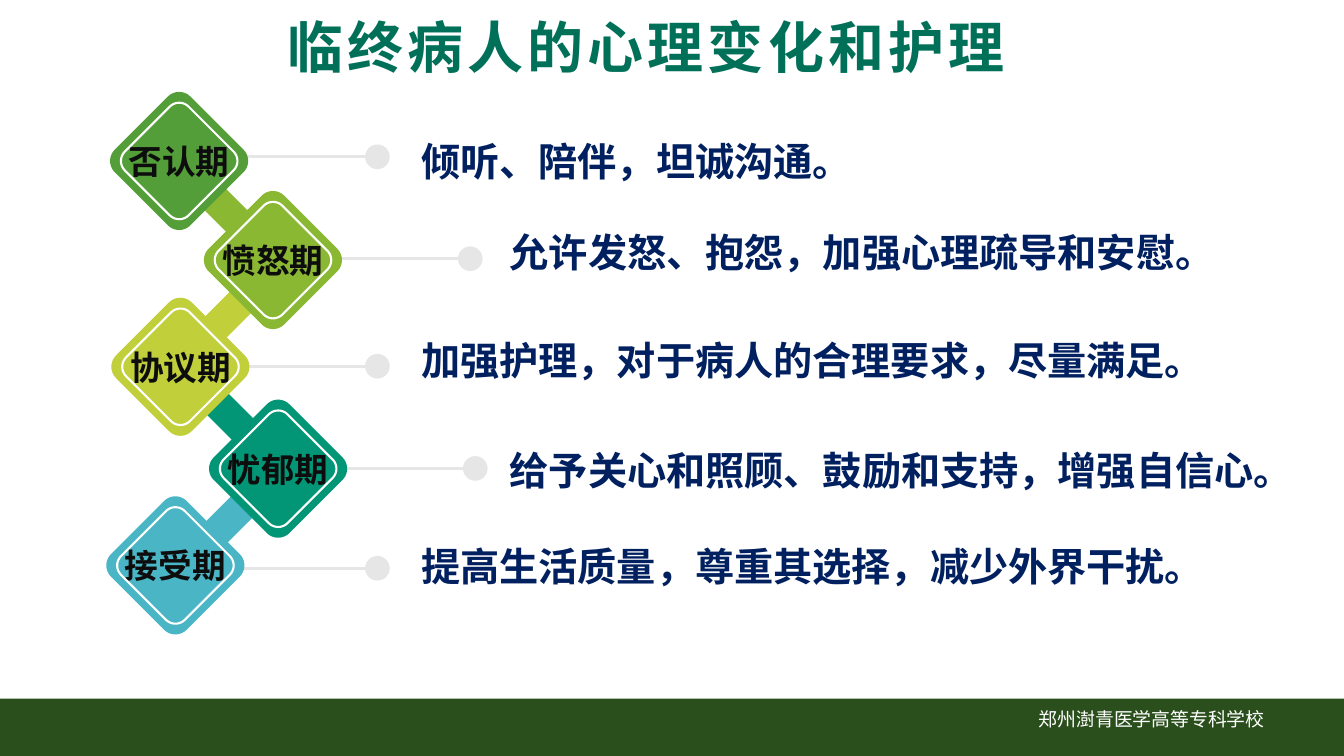
import dataclasses
import typing

import lxml.etree
import pptx
import pptx.dml.color
import pptx.enum.shapes
import pptx.enum.text
import pptx.oxml.ns
import pptx.util

Pt = pptx.util.Pt
PRESET = pptx.enum.shapes.MSO_SHAPE
ALIGN = pptx.enum.text.PP_ALIGN
CJK_FONT = "Noto Sans CJK SC"
GREY = "E6E6E6"
WHITE = "FFFFFF"

OUTER_REACH = 50.4
INNER_REACH = 42.5
DOT_SIZE = 17.6
LINK_LENGTH = 105.5
BAND_LENGTH, BAND_WIDTH = 68, 21.6
ADVICE_HEIGHT = 41


@dataclasses.dataclass
class Stage:
    name: str
    colour: str
    x: float
    y: float
    dot_x: float
    dot_y: float
    advice: str
    advice_left: float
    advice_top: float
    advice_width: float


@dataclasses.dataclass
class Band:
    x: float
    y: float
    angle: float
    colour: str


STAGES = [
    Stage("否认期", "549E39", 128, 115, 269.6, 112,
          "倾听、陪伴，坦诚沟通。", 293.8, 94.3, 327),
    Stage("愤怒期", "8AB833", 195, 185.8, 335.9, 184.8,
          "允许发怒、抱怨，加强心理疏导和安慰。", 357.1, 159.1, 526),
    Stage("协议期", "C0CF3A", 128.9, 262, 269.6, 261.6,
          "加强护理，对于病人的合理要求，尽量满足。", 293.8, 236.2, 582),
    Stage("忧郁期", "029676", 198.7, 334.8, 339.5, 334.6,
          "给予关心和照顾、鼓励和支持，增强自信心。", 357.1, 315.4, 582),
    Stage("接受期", "4AB5C4", 125.3, 403.9, 269.6, 405.9,
          "提高生活质量，尊重其选择，减少外界干扰。", 293.8, 383.8, 582),
]

BANDS = [
    Band(158.4, 147.2, 45, "8AB833"),
    Band(162.7, 372.2, -45, "4AB5C4"),
    Band(159.8, 293, 45, "029676"),
    Band(167.8, 220, -45, "C0CF3A"),
]


def rgb(colour: str) -> pptx.dml.color.RGBColor:
    return pptx.dml.color.RGBColor.from_string(colour)


def paint(shape: typing.Any, fill: str | None, line: str | None = None) -> None:
    shape.shadow.inherit = False
    if fill:
        shape.fill.solid()
        shape.fill.fore_color.rgb = rgb(fill)
    else:
        shape.fill.background()
    if line:
        shape.line.color.rgb = rgb(line)
        shape.line.width = Pt(1.5)
    else:
        shape.line.fill.background()


def write(shape: typing.Any, text: str, size: float, colour: str, bold: bool = True,
          font: str = CJK_FONT, align: typing.Any = ALIGN.CENTER,
          spacing: float = 0) -> None:
    frame_format = {
        "word_wrap": False,
        "auto_size": pptx.enum.text.MSO_AUTO_SIZE.NONE,
        "vertical_anchor": pptx.enum.text.MSO_ANCHOR.MIDDLE,
        "margin_left": Pt(7.2), "margin_right": Pt(7.2),
        "margin_top": Pt(3.6), "margin_bottom": Pt(3.6),
    }
    for name, value in frame_format.items():
        setattr(shape.text_frame, name, value)
    paragraph = shape.text_frame.paragraphs[0]
    paragraph.alignment = align
    run = paragraph.add_run()
    run.text = text
    for name, value in {"name": font, "size": Pt(size), "bold": bold}.items():
        setattr(run.font, name, value)
    run.font.color.rgb = rgb(colour)
    # East Asian typeface and letter spacing
    properties = run._r.get_or_add_rPr()
    east_asian = lxml.etree.SubElement(properties, pptx.oxml.ns.qn("a:ea"))
    east_asian.set("typeface", CJK_FONT)
    if spacing:
        properties.set("spc", str(round(spacing * 100)))


def add_preset(slide: typing.Any, kind: typing.Any, left: float, top: float,
               width: float, height: float, fill: str) -> typing.Any:
    shape = slide.shapes.add_shape(kind, Pt(left), Pt(top), Pt(width), Pt(height))
    paint(shape, fill)
    return shape


def add_text(slide: typing.Any, left: float, top: float, width: float,
             height: float, text: str, **text_format: typing.Any) -> None:
    box = slide.shapes.add_textbox(Pt(left), Pt(top), Pt(width), Pt(height))
    write(box, text, **text_format)


def add_diamond(slide: typing.Any, x: float, y: float, reach: float) -> typing.Any:
    """Diamond whose four corners are the same curve, turned by quarters."""
    steps = 10
    corner = []
    for step in range(steps + 1):
        t = step / steps
        bulge = 3 * t * (1 - t)
        across = 0.915 + 0.085 * bulge
        along = 0.157 * (t ** 3 - (1 - t) ** 3) + 0.07 * bulge * (2 * t - 1)
        corner.append((across, along))
    points = []
    for _ in range(4):
        points += [(Pt(x + reach * a), Pt(y + reach * b)) for a, b in corner]
        corner = [(-b, a) for a, b in corner]
    builder = slide.shapes.build_freeform(*points[0], scale=1.0)
    builder.add_line_segments(points[1:], close=True)
    return builder.convert_to_shape()


def add_link(slide: typing.Any, stage: Stage) -> None:
    link = slide.shapes.add_connector(
        pptx.enum.shapes.MSO_CONNECTOR.STRAIGHT,
        Pt(stage.dot_x - LINK_LENGTH), Pt(stage.dot_y), Pt(stage.dot_x), Pt(stage.dot_y))
    link.line.color.rgb = rgb(GREY)
    link.line.width = Pt(2.2)
    lxml.etree.SubElement(link._element.spPr, pptx.oxml.ns.qn("a:effectLst"))
    add_preset(slide, PRESET.OVAL, stage.dot_x - DOT_SIZE / 2,
               stage.dot_y - DOT_SIZE / 2, DOT_SIZE, DOT_SIZE, GREY)


def main() -> None:
    presentation = pptx.Presentation()
    presentation.slide_width, presentation.slide_height = Pt(960), Pt(540)
    slide = presentation.slides.add_slide(presentation.slide_layouts[5])

    # Title
    title = slide.shapes.title
    placement = {"left": 193.7, "top": 5, "width": 535.7, "height": 55.4}
    for name, value in placement.items():
        setattr(title, name, Pt(value))
    write(title, "临终病人的心理变化和护理", 40, "017058", font="Arial", spacing=3)

    # Footer bar
    add_preset(slide, PRESET.RECTANGLE, 0, 499, 960, 41, "2A4F1C")
    add_text(slide, 686.2, 502.6, 272.9, 22, "郑州澍青医学高等专科学校",
             size=13.5, colour=WHITE, bold=False)

    # Bands and links behind the diamonds
    for band in BANDS:
        shape = add_preset(slide, PRESET.ROUNDED_RECTANGLE, band.x - BAND_LENGTH / 2,
                           band.y - BAND_WIDTH / 2, BAND_LENGTH, BAND_WIDTH, band.colour)
        shape.rotation = band.angle
    for stage in STAGES:
        add_link(slide, stage)

    # Stages with their advice
    for stage in STAGES:
        diamond = add_diamond(slide, stage.x, stage.y, OUTER_REACH)
        paint(diamond, stage.colour)
        write(diamond, stage.name, 24, "0D0D0D", font="Arial")
        paint(add_diamond(slide, stage.x, stage.y, INNER_REACH), None, WHITE)
        add_text(slide, stage.advice_left, stage.advice_top, stage.advice_width,
                 ADVICE_HEIGHT, stage.advice, size=28, colour="002060", align=ALIGN.LEFT)

    presentation.save("out.pptx")


if __name__ == "__main__":
    main()
